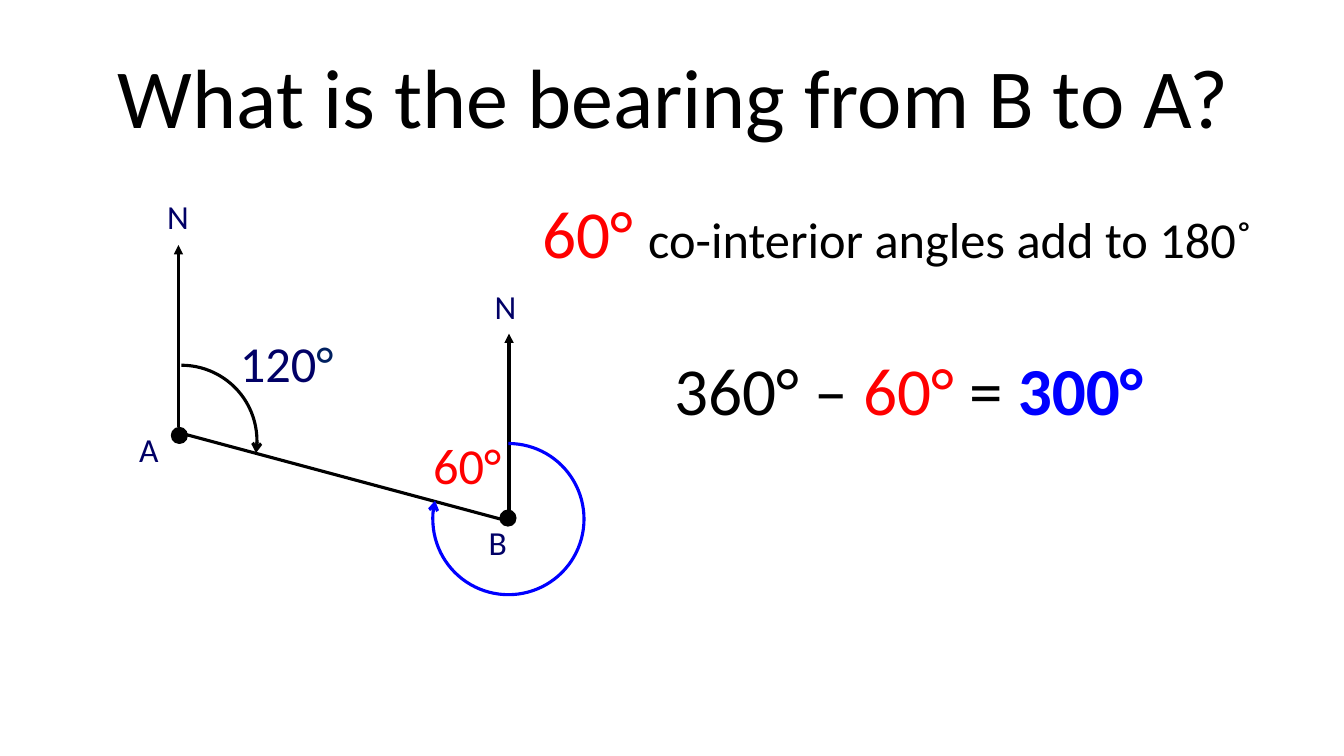
"""Build a slide that finds the bearing from B to A."""
from dataclasses import dataclass

from lxml.etree import SubElement
from pptx import Presentation
from pptx.dml.color import RGBColor
from pptx.enum.shapes import MSO_CONNECTOR as Connector, MSO_SHAPE as Preset
from pptx.enum.text import MSO_ANCHOR as Anchor, MSO_AUTO_SIZE as AutoSize, PP_ALIGN as Align
from pptx.oxml.ns import qn
from pptx.util import Pt

COLOURS = {
    "black": "000000",
    "label": "010066",
    "degree": "002060",
    "red": "FF0000",
    "blue": "0000FF",
}
FONT = "Calibri"
DOT_SIZE = 11.5
LINE_WIDTH = 2.25
DEGREE_TO_ADJUSTMENT = 0.6


@dataclass(frozen=True)
class Span:
    text: str
    size: float
    colour: str = "black"
    bold: bool = False


@dataclass(frozen=True)
class Label:
    left: float
    top: float
    width: float
    height: float
    spans: tuple[Span, ...]
    align: Align = Align.LEFT


@dataclass(frozen=True)
class Station:
    name: str
    dot: tuple[float, float]
    name_at: tuple[float, float]
    north_at: tuple[float, float]
    arrow_x: float
    arrow_bottom: float
    arrow_top: float
    arc_centre: tuple[float, float]
    arc_radius: float
    arc_end: float
    arc_colour: str


STATIONS = (
    Station("A", (122.4, 305.3), (92.2, 303.1), (112.3, 136.1), 127.5, 305.3, 175,
            (129.6, 314.9), 54, 9.2, "black"),
    Station("B", (357.1, 364.3), (342, 369.4), (346.3, 200.9), 363.6, 369.4, 238.3,
            (363.2, 370.8), 54, 194, "blue"),
)
TITLE = Label(2, 28, 958, 80, (Span("What is the bearing from B to A?", 60),), Align.CENTER)
LABELS = (
    Label(164.2, 234, 87.8, 51, (Span("120", 36, "label"), Span("°", 36, "degree"))),
    Label(302.4, 306.7, 67, 51, (Span("60°", 36, "red"),)),
    Label(471.6, 245.5, 355, 65.5,
          (Span("360° – ", 48), Span("60° ", 48, "red"), Span("= ", 48),
           Span("300°", 48, "blue", True)), Align.CENTER),
    Label(380.2, 133.2, 537.8, 65.5,
          (Span("60° ", 48, "red"), Span("co-interior angles add to 180˚", 36))),
)


def colour_of(name: str) -> RGBColor:
    """Return the named colour."""
    return RGBColor.from_string(COLOURS[name])


def set_line(shape, colour: str, width: float, arrow: str = "") -> None:
    """Format an outline and give its end an optional arrowhead."""
    shape.line.color.rgb = colour_of(colour)
    shape.line.width = Pt(width)
    if arrow:
        outline = shape._element.spPr.find(qn("a:ln"))
        SubElement(outline, qn("a:tailEnd"), type=arrow)


def write_label(shape, label: Label) -> None:
    """Fill a text shape with the spans of a label."""
    text_frame = shape.text_frame
    text_frame.word_wrap = True
    text_frame.auto_size = AutoSize.SHAPE_TO_FIT_TEXT
    text_frame.vertical_anchor = Anchor.TOP
    paragraph = text_frame.paragraphs[0]
    paragraph.alignment = label.align
    for span in label.spans:
        run = paragraph.add_run()
        run.text = span.text
        run.font.name = FONT
        run.font.size = Pt(span.size)
        run.font.bold = span.bold
        run.font.color.rgb = colour_of(span.colour)


def add_label(slide, label: Label) -> None:
    """Add a text box."""
    box = slide.shapes.add_textbox(
        Pt(label.left), Pt(label.top), Pt(label.width), Pt(label.height))
    write_label(box, label)


def add_line(slide, start: tuple[float, float], end: tuple[float, float], arrow: str = "") -> None:
    """Add a straight black line between two points."""
    line = slide.shapes.add_connector(
        Connector.STRAIGHT, Pt(start[0]), Pt(start[1]), Pt(end[0]), Pt(end[1]))
    set_line(line, "black", LINE_WIDTH, arrow)
    SubElement(line._element.spPr, qn("a:effectLst"))


def add_bearing_arc(slide, station: Station) -> None:
    """Add the clockwise arc from north to the other station."""
    left, top = (value - station.arc_radius for value in station.arc_centre)
    diameter = Pt(2 * station.arc_radius)
    arc = slide.shapes.add_shape(Preset.ARC, Pt(left), Pt(top), diameter, diameter)
    arc.adjustments[0] = 270 * DEGREE_TO_ADJUSTMENT
    arc.adjustments[1] = station.arc_end * DEGREE_TO_ADJUSTMENT
    arc.shadow.inherit = False
    arc.fill.background()
    set_line(arc, station.arc_colour, LINE_WIDTH, "arrow")


def add_station(slide, station: Station) -> None:
    """Add a station's dot, name, north arrow and bearing arc."""
    dot = slide.shapes.add_shape(
        Preset.OVAL, Pt(station.dot[0]), Pt(station.dot[1]), Pt(DOT_SIZE), Pt(DOT_SIZE))
    dot.shadow.inherit = False
    dot.fill.solid()
    dot.fill.fore_color.rgb = colour_of("black")
    set_line(dot, "black", 0.75)
    add_line(slide, (station.arrow_x, station.arrow_bottom),
             (station.arrow_x, station.arrow_top), "triangle")
    for text, place in ((station.name, station.name_at), ("N", station.north_at)):
        add_label(slide, Label(*place, 43, 49, (Span(text, 24, "label"),)))
    add_bearing_arc(slide, station)


def main() -> None:
    """Build and save the presentation."""
    presentation = Presentation()
    presentation.slide_width, presentation.slide_height = Pt(960), Pt(540)
    slide = presentation.slides.add_slide(presentation.slide_layouts[5])
    title = slide.shapes.title
    title.left, title.top = Pt(TITLE.left), Pt(TITLE.top)
    title.width, title.height = Pt(TITLE.width), Pt(TITLE.height)
    write_label(title, TITLE)
    add_line(slide, (132.5, 310.3), (365.8, 373))
    for station in STATIONS:
        add_station(slide, station)
    for label in LABELS:
        add_label(slide, label)
    presentation.save("out.pptx")


if __name__ == "__main__":
    main()
